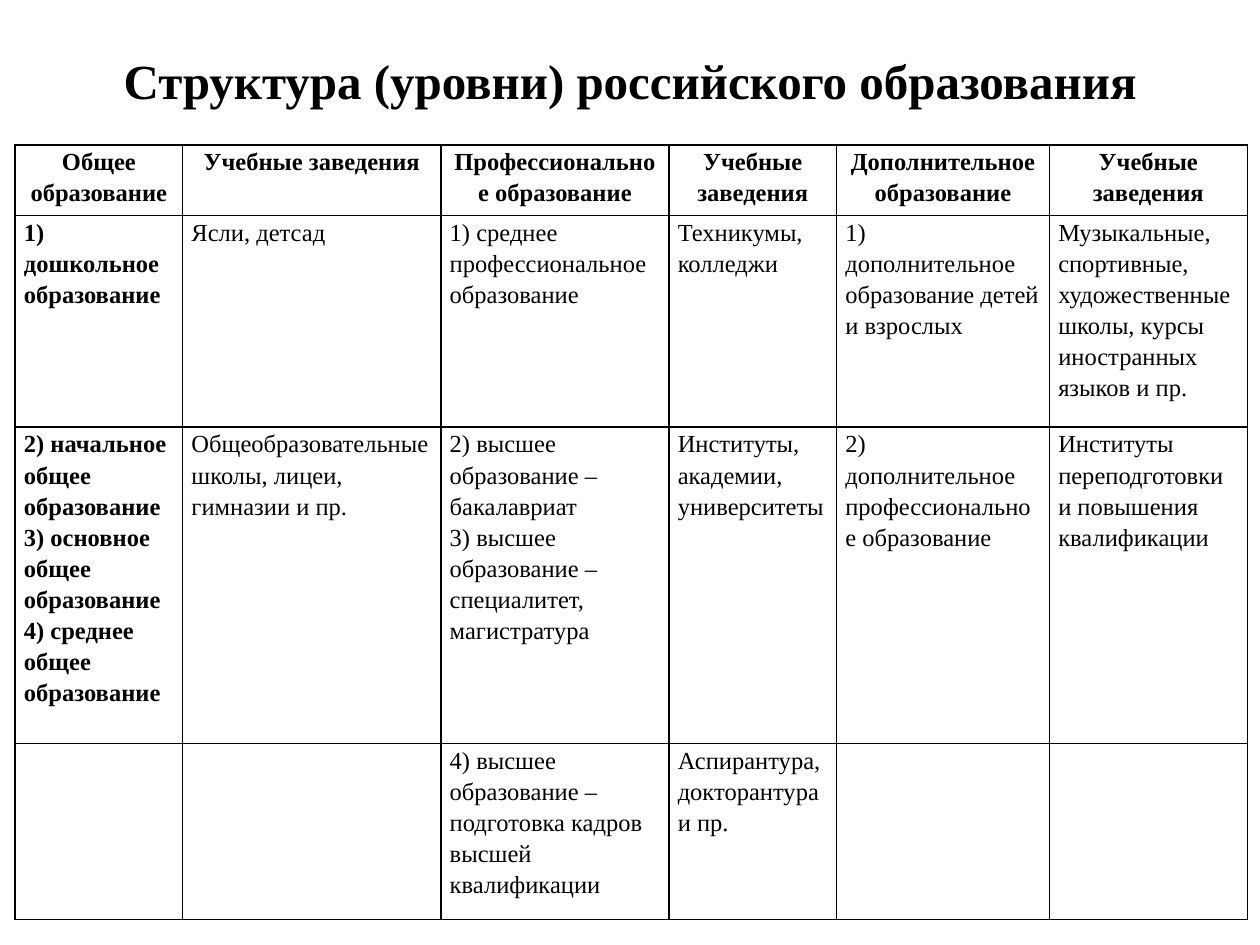
"""Build a slide with a table of the levels of Russian education."""
from lxml import etree
from pptx import Presentation
from pptx.dml.color import RGBColor
from pptx.enum.text import MSO_ANCHOR, PP_ALIGN
from pptx.oxml.ns import qn
from pptx.util import Inches, Pt

TOP = MSO_ANCHOR.TOP
MID, LEFT = PP_ALIGN.CENTER, PP_ALIGN.LEFT

THEME = {
    "font": "Times New Roman",
    "ink": "000000",
    "title": Pt(28),
    "body": Pt(14),
    "rule": Pt(1),
}
COLS = [1.33, 2.05, 1.81, 1.33, 1.69, 1.57]
ROWS = [0.56, 1.68, 2.51, 1.4]
PAD = {
    "margin_left": Inches(0.07),
    "margin_right": Inches(0.07),
    "margin_top": 0,
    "margin_bottom": 0,
}
CELLS = [
    [
        "Общее образование",
        "Учебные заведения",
        "Профессиональное образование",
        "Учебные заведения",
        "Дополнительное образование",
        "Учебные заведения",
    ],
    [
        "1) дошкольное образование",
        "Ясли, детсад",
        "1) среднее профессиональное образование",
        "Техникумы, колледжи",
        "1) дополнительное образование детей и взрослых",
        "Музыкальные, спортивные, художественные школы, "
        "курсы иностранных языков и пр.",
    ],
    [
        "2) начальное общее образование\v3) основное общее образование\v"
        "4) среднее общее образование",
        "Общеобразовательные школы, лицеи, гимназии и пр.",
        "2) высшее образование – бакалавриат\v"
        "3) высшее образование – специалитет, магистратура",
        "Институты, академии, университеты",
        "2) дополнительное профессиональное образование",
        "Институты переподготовки и повышения квалификации",
    ],
    [
        "",
        "",
        "4) высшее образование – подготовка кадров высшей квалификации",
        "Аспирантура, докторантура и пр.",
        "",
        "",
    ],
]


def write(frame, text, size, bold, align, space):
    frame.text = text
    para = frame.paragraphs[0]
    para.alignment = align
    para.line_spacing = space
    form = {"name": THEME["font"], "size": size, "bold": bold}
    for run in para.runs:
        for key, value in form.items():
            setattr(run.font, key, value)
        run.font.color.rgb = RGBColor.from_string(THEME["ink"])


def frame_cell(cell):
    props = cell._tc.get_or_add_tcPr()
    for place, side in enumerate(("lnL", "lnR", "lnT", "lnB")):
        line = etree.Element(qn(f"a:{side}"), w=str(THEME["rule"]))
        fill = etree.SubElement(line, qn("a:solidFill"))
        etree.SubElement(fill, qn("a:srgbClr"), val=THEME["ink"])
        props.insert(place, line)


deck = Presentation()
deck.slide_width, deck.slide_height = Inches(10), Inches(7.5)
slide = deck.slides.add_slide(deck.slide_layouts[6])

title = slide.shapes.add_textbox(
    Inches(0.5), Inches(0.3), Inches(9), Inches(1.25)
).text_frame
for key, value in {
    "word_wrap": True,
    "vertical_anchor": TOP,
    "margin_top": Inches(0.1),
}.items():
    setattr(title, key, value)
write(
    title,
    "Структура (уровни) российского образования",
    THEME["title"],
    True,
    MID,
    1.0,
)

table = slide.shapes.add_table(
    len(ROWS),
    len(COLS),
    Inches(0.12),
    Inches(1.15),
    Inches(sum(COLS)),
    Inches(sum(ROWS)),
).table
table.horz_banding = False
for col, width in zip(table.columns, COLS):
    col.width = Inches(width)
for row, height in zip(table.rows, ROWS):
    row.height = Inches(height)

for r, texts in enumerate(CELLS):
    for c, text in enumerate(texts):
        cell = table.cell(r, c)
        for key, value in PAD.items():
            setattr(cell, key, value)
        cell.fill.background()
        frame_cell(cell)
        write(
            cell.text_frame,
            text,
            THEME["body"],
            r == 0 or c == 0,
            LEFT if r else MID,
            1.15,
        )

deck.save("out.pptx")
